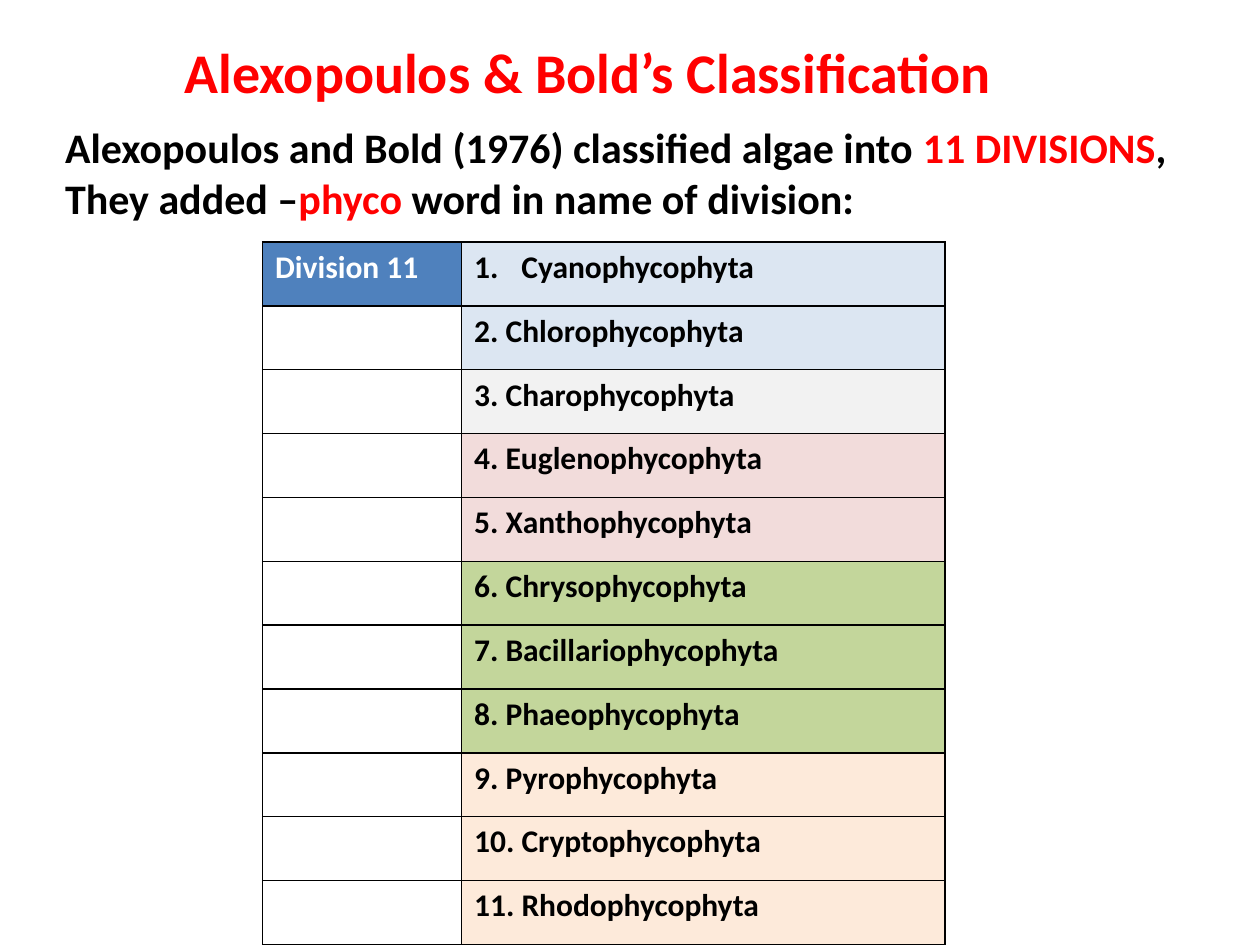
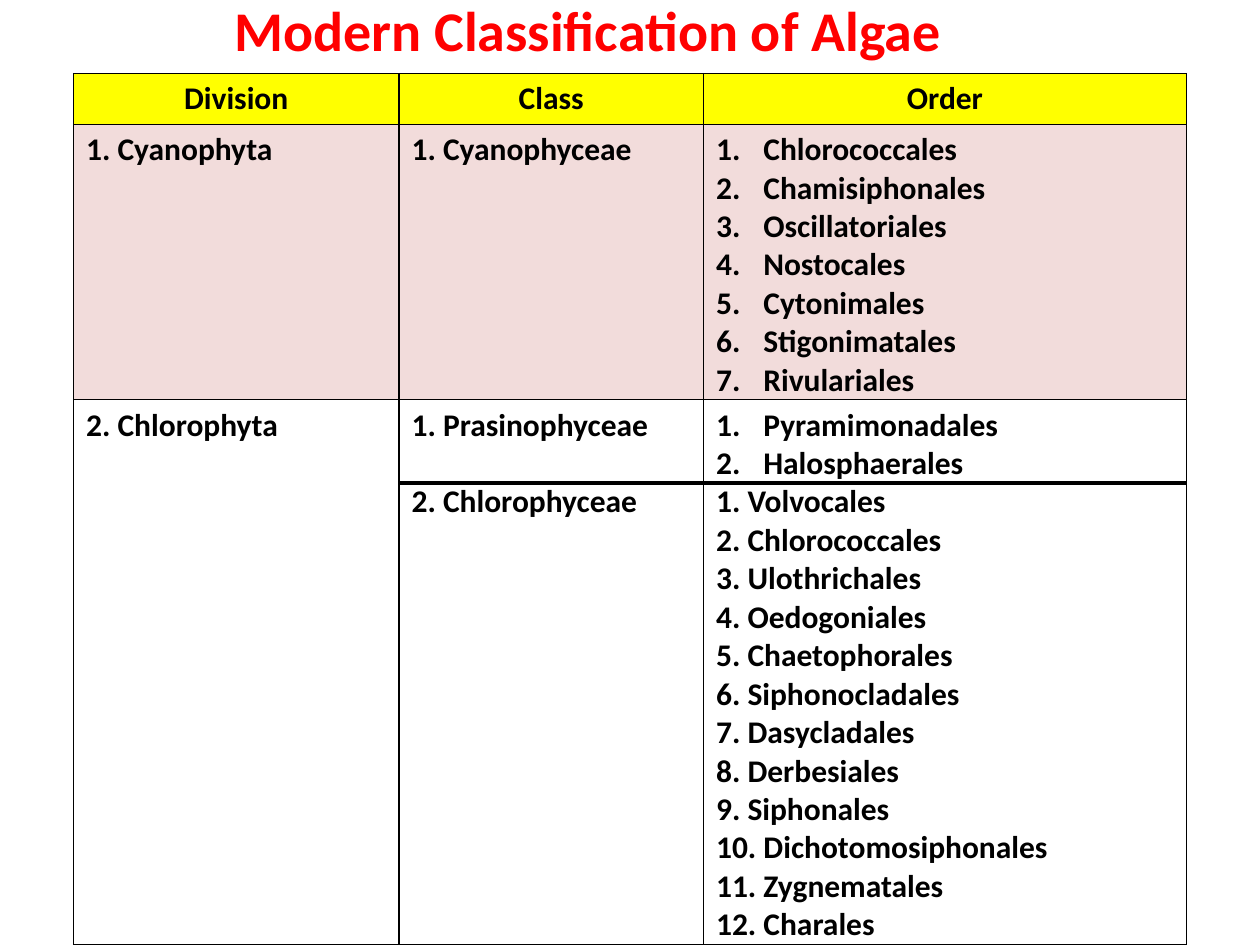
from dataclasses import dataclass
from lxml import etree
from pptx import Presentation
from pptx.dml.color import RGBColor
from pptx.enum.text import MSO_ANCHOR, MSO_AUTO_SIZE as AutoSize, PP_ALIGN as Align
from pptx.oxml import parse_xml
from pptx.oxml.ns import nsdecls, qn
from pptx.util import Pt

FONT = "Calibri"
COLORS = {
    "red": "FF0000", "black": "000000", "white": "FFFFFF", "yellow": "FFFF00",
    "blue": "4F81BD", "pale_blue": "DCE6F2", "grey": "F2F2F2",
    "pink": "F2DCDB", "green": "C3D69B", "peach": "FDEADA",
}


@dataclass
class Line:
    text: str
    numbered: bool = False
    color: str = "black"
    align: Align = Align.LEFT
    space_before: float = 0


def numbered(*names):
    return [Line(name, numbered=True) for name in names]


def typed(*names, start=1):
    return [Line(f"{number}. {name}") for number, name in enumerate(names, start)]


# Content: Alexopoulos and Bold
BOLD_TITLE = "Alexopoulos & Bold’s Classification"
BOLD_INTRO = [
    ("Alexopoulos and Bold (1976) classified algae into ", "black"),
    ("11 DIVISIONS", "red"),
    (", They added –", "black"),
    ("phyco", "red"),
    (" word in name of division:", "black"),
]
DIVISIONS = [
    ("Cyanophycophyta", "pale_blue"), ("Chlorophycophyta", "pale_blue"),
    ("Charophycophyta", "grey"),
    ("Euglenophycophyta", "pink"), ("Xanthophycophyta", "pink"),
    ("Chrysophycophyta", "green"), ("Bacillariophycophyta", "green"),
    ("Phaeophycophyta", "green"),
    ("Pyrophycophyta", "peach"), ("Cryptophycophyta", "peach"),
    ("Rhodophycophyta", "peach"),
]

# Content: modern classification
MODERN_TITLE = "Modern Classification of Algae"
HEADINGS = ["Division", "Class", "Order"]
CYANOPHYTA = [
    typed("Cyanophyta"),
    typed("Cyanophyceae"),
    numbered("Chlorococcales", "Chamisiphonales", "Oscillatoriales", "Nostocales",
             "Cytonimales", "Stigonimatales", "Rivulariales"),
]
CHLOROPHYTA = [
    typed("Chlorophyta", start=2),
    [Line("1. Prasinophyceae"), Line("2. Chlorophyceae", space_before=22)],
    numbered("Pyramimonadales", "Halosphaerales")
    + typed("Volvocales", "Chlorococcales", "Ulothrichales", "Oedogoniales",
            "Chaetophorales", "Siphonocladales", "Dasycladales", "Derbesiales",
            "Siphonales", "Dichotomosiphonales", "Zygnematales", "Charales"),
]


def rgb(name):
    return RGBColor.from_string(COLORS[name])


def add_run(paragraph, text, size, color):
    run = paragraph.add_run()
    run.text = text
    run.font.name, run.font.size, run.font.bold = FONT, Pt(size), True
    run.font.color.rgb = rgb(color)


def place(shape, left, top, width, height):
    shape.left, shape.top, shape.width, shape.height = map(Pt, (left, top, width, height))


def set_list_style(paragraph, indent, bullet_xml):
    properties = paragraph._p.get_or_add_pPr()
    properties.set("marL", str(Pt(indent)))
    properties.set("indent", str(Pt(-indent)))
    properties.append(parse_xml(bullet_xml))


def fill_placeholder(shape, box, runs, size, align):
    place(shape, *box)
    frame = shape.text_frame
    frame.word_wrap, frame.auto_size = True, AutoSize.NONE
    frame.vertical_anchor = MSO_ANCHOR.TOP
    paragraph = frame.paragraphs[0]
    set_list_style(paragraph, 0, f"<a:buNone {nsdecls('a')}/>")
    paragraph.alignment, paragraph.space_before = align, Pt(0)
    for text, color in runs:
        add_run(paragraph, text, size, color)


def add_titled_slide(presentation, layout, title, top):
    slide = presentation.slides.add_slide(presentation.slide_layouts[layout])
    fill_placeholder(slide.shapes.title, (66, top, 540, 46), [(title, "red")], 32,
                     Align.CENTER)
    return slide


def fill_cell(cell, lines, fill):
    properties = cell._tc.get_or_add_tcPr()
    for side in "LRTB":
        properties.append(parse_xml(
            f'<a:ln{side} {nsdecls("a")} w="{Pt(1)}"><a:solidFill>'
            f'<a:srgbClr val="{COLORS["black"]}"/></a:solidFill></a:ln{side}>'))
    cell.fill.solid()
    cell.fill.fore_color.rgb = rgb(fill)
    # Long lists need the full height of their row
    cell.margin_bottom = Pt(0)
    frame = cell.text_frame
    for index, line in enumerate(lines):
        paragraph = frame.add_paragraph() if index else frame.paragraphs[0]
        if line.numbered:
            set_list_style(paragraph, 27,
                           f'<a:buAutoNum {nsdecls("a")} type="arabicPeriod"/>')
        paragraph.alignment = line.align
        if line.space_before:
            paragraph.space_before = Pt(line.space_before)
        add_run(paragraph, line.text, 18, line.color)


def add_grid(slide, left, top, widths, heights, rows):
    """Each row is a list of (lines, fill) pairs."""
    box = (left, top, sum(widths), sum(heights))
    frame = slide.shapes.add_table(len(rows), len(widths), *map(Pt, box))
    table = frame.table
    table.first_row = table.horz_banding = False
    for column, width in zip(table.columns, widths):
        column.width = Pt(width)
    for row, height, cells in zip(table.rows, heights, rows):
        row.height = Pt(height)
        for cell, (lines, fill) in zip(row.cells, cells):
            fill_cell(cell, lines, fill)


def build_bold_slide(presentation):
    slide = add_titled_slide(presentation, 1, BOLD_TITLE, 18)
    fill_placeholder(slide.placeholders[1], (30, 66, 672, 65.5), BOLD_INTRO, 24,
                     Align.LEFT)
    rows = []
    for number, (name, fill) in enumerate(DIVISIONS, 1):
        if number == 1:
            label = ([Line("Division 11", color="white")], "blue")
            lines = numbered(name)
        else:
            label = ([], "white")
            lines = typed(name, start=number)
        rows.append([label, (lines, fill)])
    add_grid(slide, 150, 138.3, [113.75, 276.25], [36.5] * len(rows), rows)


def build_modern_slide(presentation):
    slide = add_titled_slide(presentation, 5, MODERN_TITLE, -6)
    rows = [
        [([Line(heading, align=Align.CENTER)], "yellow") for heading in HEADINGS],
        [(lines, "pink") for lines in CYANOPHYTA],
        [(lines, "white") for lines in CHLOROPHYTA],
    ]
    left, widths = 42, [186, 174, 276]
    add_grid(slide, left, 42, widths, [29, 157, 311], rows)

    # Rule between the two classes of Chlorophyta
    rule_y = Pt(276)
    rule = slide.shapes.add_connector(1, Pt(left + widths[0]), rule_y,
                                      Pt(left + sum(widths)), rule_y)
    rule.line.color.rgb, rule.line.width = rgb("black"), Pt(2)
    etree.SubElement(rule._element.spPr, qn("a:effectLst"))


def main():
    presentation = Presentation()
    presentation.slide_width, presentation.slide_height = Pt(720), Pt(540)
    build_bold_slide(presentation)
    build_modern_slide(presentation)
    presentation.save("out.pptx")


if __name__ == "__main__":
    main()
